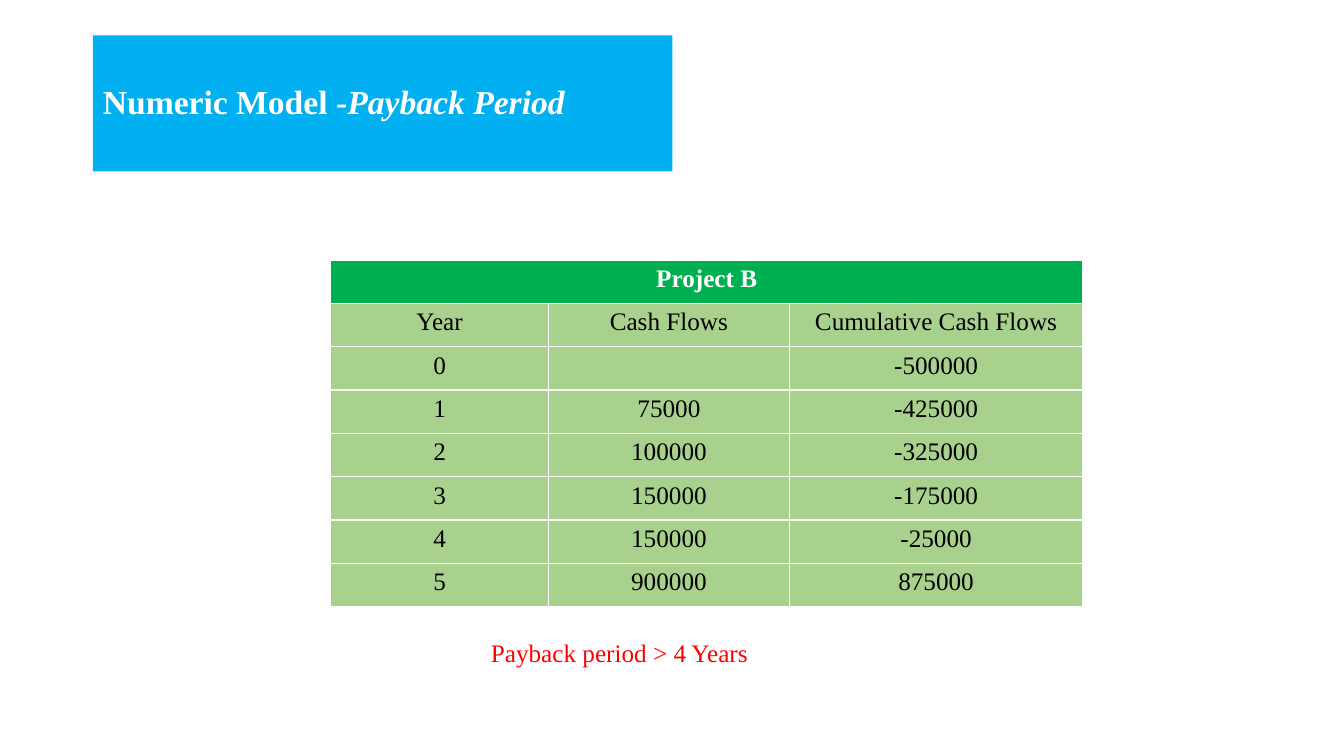
from pptx import Presentation
from pptx.dml.color import RGBColor
from pptx.enum.text import MSO_ANCHOR, MSO_AUTO_SIZE, PP_ALIGN
from pptx.util import Inches, Pt

FONT = "Times New Roman"
WHITE = RGBColor(0xFF, 0xFF, 0xFF)
BLACK = RGBColor(0x00, 0x00, 0x00)
RED = RGBColor(0xFF, 0x00, 0x00)
BLUE = RGBColor(0x00, 0xB0, 0xF0)
GREEN = RGBColor(0x00, 0xB0, 0x50)
LIGHT_GREEN = RGBColor(0xA9, 0xD1, 0x8E)

PROJECT = "Project B"
COLUMN_WIDTHS = (2.16, 2.39, 2.91)
ROW_HEIGHT = 0.43
CASH_FLOWS = [
    ("Year", "Cash Flows", "Cumulative Cash Flows"),
    ("0", "", "-500000"),
    ("1", "75000", "-425000"),
    ("2", "100000", "-325000"),
    ("3", "150000", "-175000"),
    ("4", "150000", "-25000"),
    ("5", "900000", "875000"),
]


def style_paragraph(paragraph, size, color, bold=False, align=PP_ALIGN.LEFT):
    paragraph.alignment = align
    font = paragraph.font
    font.name, font.size, font.bold = FONT, Pt(size), bold
    font.color.rgb = color


def place_title(slide, left, top, width, height):
    title = slide.shapes.title
    title.left, title.top = Inches(left), Inches(top)
    title.width, title.height = Inches(width), Inches(height)
    title.fill.solid()
    title.fill.fore_color.rgb = BLUE
    frame = title.text_frame
    frame.word_wrap = True
    frame.auto_size = MSO_AUTO_SIZE.NONE
    frame.vertical_anchor = MSO_ANCHOR.MIDDLE
    heading = frame.paragraphs[0]
    heading.line_spacing = 0.9
    style_paragraph(heading, 24, WHITE, bold=True)
    heading.add_run().text = "Numeric Model -"
    method = heading.add_run()
    method.text = "Payback Period"
    method.font.italic = True


def fill_cell(cell, text, fill, color, bold=False):
    cell.text = text
    cell.fill.solid()
    cell.fill.fore_color.rgb = fill
    style_paragraph(cell.text_frame.paragraphs[0], 18, color, bold, PP_ALIGN.CENTER)


def add_cash_flow_table(slide, left, top):
    """Add the project heading row, merged across, above the yearly figures."""
    row_count = len(CASH_FLOWS) + 1
    table = slide.shapes.add_table(
        row_count, len(COLUMN_WIDTHS), Inches(left), Inches(top),
        Inches(sum(COLUMN_WIDTHS)), Inches(ROW_HEIGHT * row_count)).table
    table.horz_banding = False
    for column, width in zip(table.columns, COLUMN_WIDTHS):
        column.width = Inches(width)
    project_cell = table.cell(0, 0)
    project_cell.merge(table.cell(0, len(COLUMN_WIDTHS) - 1))
    fill_cell(project_cell, PROJECT, GREEN, WHITE, bold=True)
    for row, values in enumerate(CASH_FLOWS, start=1):
        for col, value in enumerate(values):
            fill_cell(table.cell(row, col), value, LIGHT_GREEN, BLACK)


def add_conclusion(slide, left, top, width, height):
    frame = slide.shapes.add_textbox(
        Inches(left), Inches(top), Inches(width), Inches(height)).text_frame
    frame.word_wrap = True
    frame.auto_size = MSO_AUTO_SIZE.SHAPE_TO_FIT_TEXT
    conclusion = frame.paragraphs[0]
    conclusion.text = "Payback period > 4 Years"
    style_paragraph(conclusion, 18, RED)


def main():
    deck = Presentation()
    deck.slide_width, deck.slide_height = Inches(13.33), Inches(7.5)
    slide = deck.slides.add_slide(deck.slide_layouts.get_by_name("Title Only"))
    place_title(slide, 0.92, 0.35, 5.75, 1.35)
    add_cash_flow_table(slide, 3.28, 2.58)
    add_conclusion(slide, 4.77, 6.27, 6.67, 0.4)
    deck.save("out.pptx")


if __name__ == "__main__":
    main()
